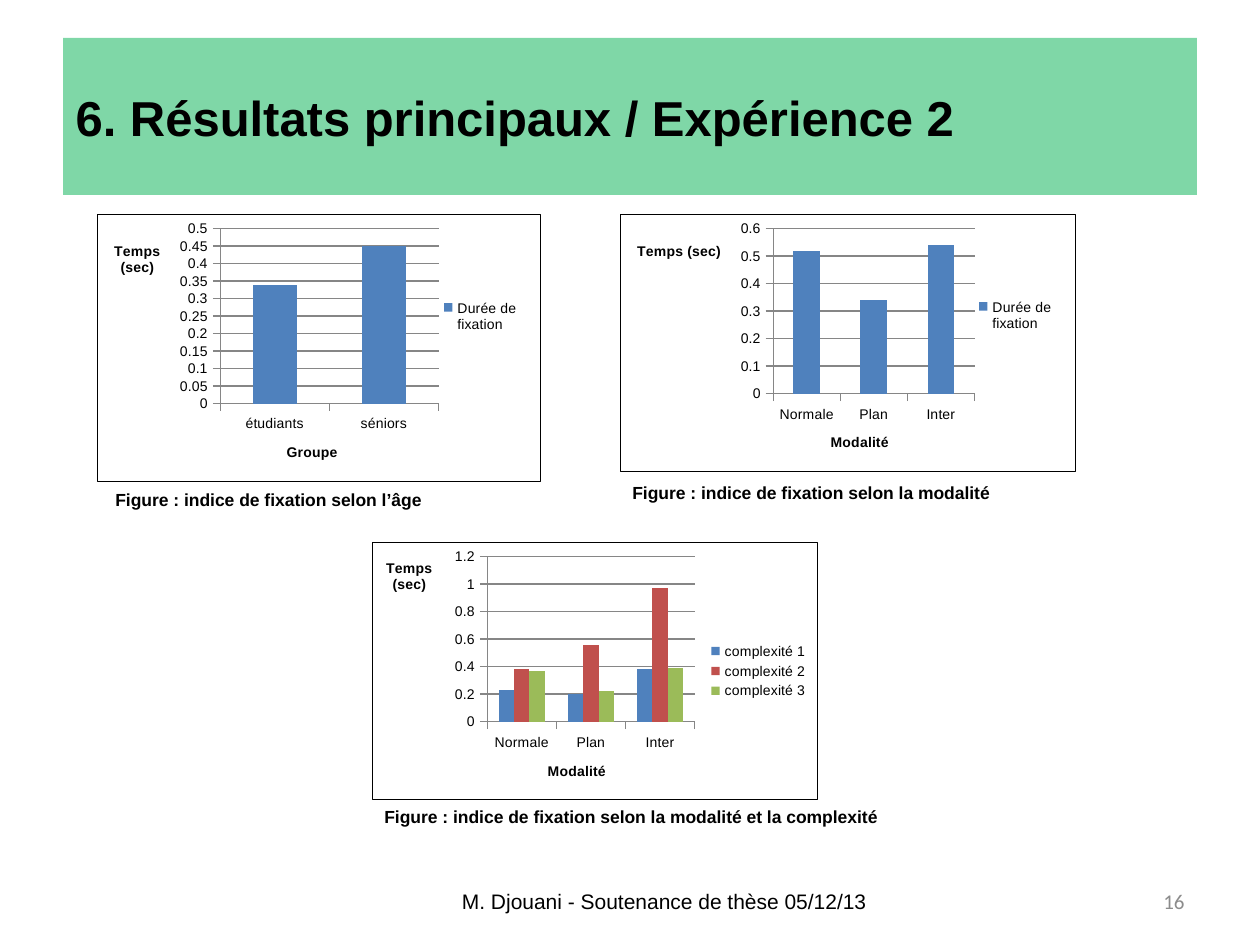
from lxml.etree import SubElement
from pptx import Presentation
from pptx.chart.data import CategoryChartData
from pptx.dml.color import RGBColor
from pptx.enum.chart import XL_CHART_TYPE, XL_LEGEND_POSITION, XL_TICK_MARK
from pptx.enum.text import MSO_ANCHOR, PP_ALIGN
from pptx.oxml import parse_xml
from pptx.oxml.ns import nsdecls, qn
from pptx.util import Pt

SCALE = 914400 / 126
COLORS = {
    "band": "00B050", "text": "000000", "page": "8C8C8C", "grid": "868686",
    "blue": "4F81BD", "red": "C0504D", "green": "9BBB59",
}
SERIES = ("blue", "red", "green")


def emu(*box):
    return [round(n * SCALE) for n in box]


def color(name):
    return RGBColor.from_string(COLORS[name])


def style(font, size, bold=False, tint="text", face="Arial"):
    font.name, font.size, font.bold = face, Pt(size), bold
    font.color.rgb = color(tint)


def add_title(slide, box, text):
    title = slide.shapes.title
    title.left, title.top, title.width, title.height = emu(*box)
    title.fill.solid()
    title.fill.fore_color.rgb = color("band")
    tint = title.fill._xPr.find(".//" + qn("a:srgbClr"))
    SubElement(tint, qn("a:alpha"), val="50000")
    frame = title.text_frame
    frame.text = text
    frame.vertical_anchor = MSO_ANCHOR.MIDDLE
    frame.paragraphs[0].alignment = PP_ALIGN.LEFT
    style(frame.paragraphs[0].font, 28, True)


def add_text(slide, box, text, align=PP_ALIGN.LEFT, anchor=MSO_ANCHOR.TOP, **look):
    frame = slide.shapes.add_textbox(*emu(*box)).text_frame
    frame.word_wrap = True
    frame.vertical_anchor = anchor
    frame.text = text
    frame.paragraphs[0].alignment = align
    style(frame.paragraphs[0].font, **look)


def place(part, index, size, spot, inner=False):
    old = part.find(qn("c:layout"))
    if old is not None:
        part.remove(old)
    tags = [("layoutTarget", "inner")] if inner else []
    tags += [("xMode", "edge"), ("yMode", "edge")]
    ratios = [n / size[i % 2] for i, n in enumerate(spot)]
    tags += [(tag, f"{n:.4f}") for tag, n in zip("xywh", ratios)]
    body = "".join(f'<c:{tag} val="{val}"/>' for tag, val in tags)
    part.insert(index, parse_xml(
        f'<c:layout {nsdecls("c")}><c:manualLayout>{body}</c:manualLayout></c:layout>'))


def style_axis(axis, text, size, spot):
    axis.major_tick_mark = XL_TICK_MARK.OUTSIDE
    axis.format.line.color.rgb = color("grid")
    frame = axis.axis_title.text_frame
    frame.text = text
    style(frame.paragraphs[0].font, 8, True)
    frame._txBody.bodyPr.set("rot", "0")
    frame._txBody.bodyPr.set("vert", "horz")
    place(axis.axis_title._element, 1, size, spot)


def add_chart(slide, box, kind, cats, series, label, step, plot, heads, key):
    data = CategoryChartData()
    data.categories = cats
    for name, vals in series:
        data.add_series(name, vals)
    chart = slide.shapes.add_chart(kind, *emu(*box), data).chart
    style(chart.font, 8)
    chart.has_title = False
    size = box[2:]
    root = chart._chartSpace
    root.find(qn("c:chart")).addnext(parse_xml(
        f'<c:spPr {nsdecls("c", "a")}><a:noFill/><a:ln w="9525"><a:solidFill>'
        f'<a:srgbClr val="{COLORS["text"]}"/></a:solidFill></a:ln></c:spPr>'))
    place(root.find(".//" + qn("c:plotArea")), 0, size, plot, True)

    bars = chart.plots[0]
    bars.gap_width = 150
    bars.vary_by_categories = False
    for item, tint in zip(bars.series, SERIES):
        item.format.fill.solid()
        item.format.fill.fore_color.rgb = color(tint)

    style_axis(chart.value_axis, "Temps (sec)", size, heads[0])
    style_axis(chart.category_axis, label, size, heads[1])
    chart.value_axis.major_unit = step
    chart.value_axis.minimum_scale = 0
    chart.value_axis.major_gridlines.format.line.color.rgb = color("grid")

    chart.has_legend = True
    chart.legend.position = XL_LEGEND_POSITION.RIGHT
    chart.legend.include_in_layout = False
    place(chart.legend._element, 1, size, key)


def add_footer(slide, top, height):
    mid = MSO_ANCHOR.MIDDLE
    add_text(slide, (431, top, 467, height), "M. Djouani - Soutenance de thèse 05/12/13",
             PP_ALIGN.CENTER, mid, size=12)
    add_text(slide, (903, top, 294, height), "16", PP_ALIGN.RIGHT, mid,
             size=12, tint="page", face="Calibri")


def main():
    deck = Presentation()
    deck.slide_width, deck.slide_height = emu(1260, 945)
    slide = deck.slides.add_slide(deck.slide_layouts[5])
    add_title(slide, (63, 38, 1134, 157), "6. Résultats principaux / Expérience 2")

    stacked, grouped = XL_CHART_TYPE.COLUMN_STACKED, XL_CHART_TYPE.COLUMN_CLUSTERED
    fixation = "Durée de fixation"
    modes = ("Normale", "Plan", "Inter")
    add_chart(slide, (97, 214, 444, 268), stacked, ("étudiants", "séniors"),
              [(fixation, (0.34, 0.45))], "Groupe", 0.05,
              (123, 14, 219, 176), ((14, 25), (187, 227)), (333, 82, 102, 40))
    add_chart(slide, (620, 214, 456, 258), grouped, modes,
              [(fixation, (0.52, 0.34, 0.54))], "Modalité", 0.1,
              (153, 14, 202, 166), ((14, 25), (208, 217)), (345, 81, 102, 40))
    add_chart(slide, (372, 542, 446, 258), grouped, modes,
              [("complexité 1", (0.23, 0.2, 0.38)),
               ("complexité 2", (0.38, 0.56, 0.97)),
               ("complexité 3", (0.37, 0.22, 0.39))], "Modalité", 0.2,
              (115, 14, 208, 166), ((11, 14), (173, 218)), (333, 97, 108, 64))

    captions = [
        ((103, 483, 456, 34), "l’âge"),
        ((620, 476, 456, 34), "la modalité"),
        ((372, 800, 518, 55), "la modalité et la complexité"),
    ]
    for box, topic in captions:
        add_text(slide, box, f"Figure : indice de fixation selon {topic}",
                 size=10, bold=True)
    add_footer(slide, 876, 50)
    deck.save("out.pptx")


if __name__ == "__main__":
    main()
